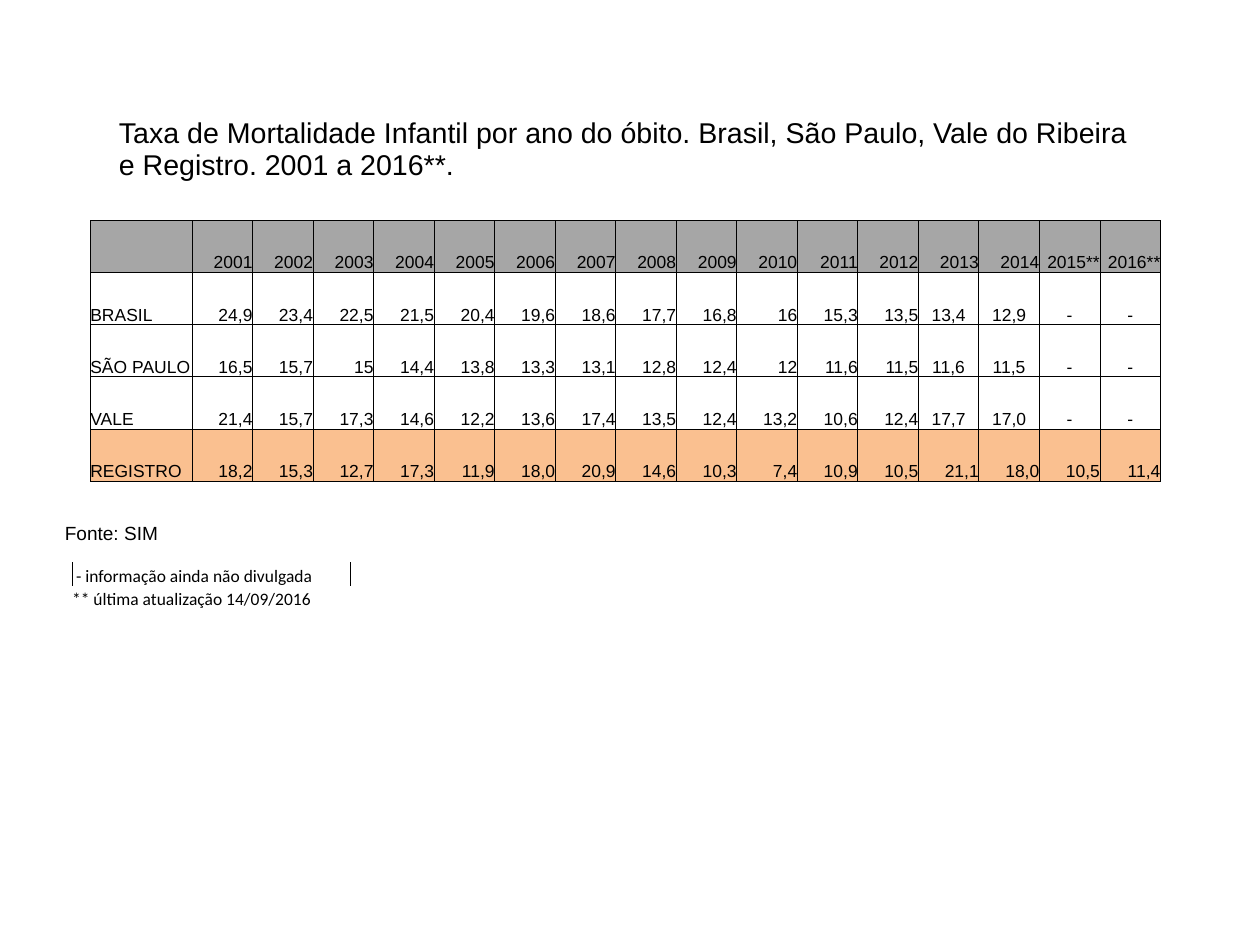
from dataclasses import dataclass
from typing import Any

from lxml.etree import SubElement
from pptx import Presentation
from pptx.dml.color import RGBColor
from pptx.enum.text import MSO_ANCHOR, MSO_AUTO_SIZE, PP_ALIGN
from pptx.oxml.ns import qn
from pptx.util import Cm, Pt

SLIDE_WIDTH = Cm(28)
SLIDE_HEIGHT = Cm(21)
COLOURS = {"ink": "000000", "header": "A6A6A6", "highlight": "FAC090"}
PLAIN_TABLE_STYLE = "{2D5ABB26-0587-4C30-8999-92F81FD0307C}"
BORDER_WIDTH = Pt(0.5)
FIRST_RECENT_COLUMN = 13


@dataclass(frozen=True)
class Area:
    left: float
    top: float
    width: float
    height: float

    def lengths(self) -> tuple[int, int, int, int]:
        return (
            round(SLIDE_WIDTH * self.left / 100),
            round(SLIDE_HEIGHT * self.top / 100),
            round(SLIDE_WIDTH * self.width / 100),
            round(SLIDE_HEIGHT * self.height / 100),
        )


@dataclass(frozen=True)
class RateRow:
    label: str
    values: str
    fill: str | None = None
    recent_alignment: PP_ALIGN = PP_ALIGN.CENTER

    def texts(self) -> list[str]:
        return [self.label, *self.values.split()]

    def alignment(self, column: int) -> PP_ALIGN:
        if column == 0:
            return PP_ALIGN.LEFT
        return self.recent_alignment if column >= FIRST_RECENT_COLUMN else PP_ALIGN.RIGHT


TITLE_AREA = Area(8.53, 11.85, 82.2, 7.98)
SOURCE_AREA = Area(4.26, 54.78, 17.88, 3.51)
RATES_AREA = Area(7.17, 23.32, 84.95, 27.6)
NOTES_AREA = Area(5.72, 59.49, 61.43, 5.05)
RATES_LABEL_SHARE = 0.095
NOTES_LABEL_SHARE = 0.36

RATE_ROWS = [
    RateRow("", " ".join([*map(str, range(2001, 2015)), "2015**", "2016**"]), "header", PP_ALIGN.RIGHT),
    RateRow("BRASIL", "24,9 23,4 22,5 21,5 20,4 19,6 18,6 17,7 16,8 16 15,3 13,5 13,4 12,9 - -"),
    RateRow("SÃO PAULO", "16,5 15,7 15 14,4 13,8 13,3 13,1 12,8 12,4 12 11,6 11,5 11,6 11,5 - -"),
    RateRow("VALE", "21,4 15,7 17,3 14,6 12,2 13,6 17,4 13,5 12,4 13,2 10,6 12,4 17,7 17,0 - -"),
    RateRow(
        "REGISTRO",
        "18,2 15,3 12,7 17,3 11,9 18,0 20,9 14,6 10,3 7,4 10,9 10,5 21,1 18,0 10,5 11,4",
        "highlight",
        PP_ALIGN.RIGHT,
    ),
]
NOTES = [" - informação ainda não divulgada", "** última atualização 14/09/2016"]


def write_text(
    frame: Any,
    text: str,
    *,
    size: float,
    font: str = "Arial",
    alignment: PP_ALIGN = PP_ALIGN.LEFT,
) -> None:
    para = frame.paragraphs[0]
    para.alignment = alignment
    para.line_spacing = 0.93
    para.space_before = Pt(0)
    if not text:
        para._p.get_or_add_endParaRPr().set("sz", str(round(size * 100)))
        return
    span = para.add_run()
    span.text = text
    span.font.size = Pt(size)
    span.font.name = font
    span.font.color.rgb = RGBColor.from_string(COLOURS["ink"])


def format_box(box: Any, area: Area) -> None:
    box.left, box.top, box.width, box.height = area.lengths()
    frame = box.text_frame
    frame.word_wrap = True
    frame.auto_size = MSO_AUTO_SIZE.NONE
    frame.vertical_anchor = MSO_ANCHOR.TOP


def add_grid(page: Any, area: Area, rows: int, columns: int, label_share: float) -> Any:
    left, top, width, height = area.lengths()
    table = page.shapes.add_table(rows, columns, left, top, width, height).table
    table.first_row = False
    table.horz_banding = False
    table._tbl.tblPr.find(qn("a:tableStyleId")).text = PLAIN_TABLE_STYLE
    label_width = round(width * label_share)
    for index, column in enumerate(table.columns):
        column.width = label_width if index == 0 else (width - label_width) // (columns - 1)
    return table


def format_cell(cell: Any, fill: str | None = None, sides: str = "") -> None:
    cell.margin_left = cell.margin_right = cell.margin_top = cell.margin_bottom = 0
    cell.vertical_anchor = MSO_ANCHOR.BOTTOM
    properties = cell._tc.get_or_add_tcPr()
    for side in "LRTB":
        line = SubElement(properties, qn(f"a:ln{side}"), w=str(BORDER_WIDTH))
        if side in sides:
            solid = SubElement(line, qn("a:solidFill"))
            SubElement(solid, qn("a:srgbClr"), val=COLOURS["ink"])
        else:
            SubElement(line, qn("a:noFill"))
    if fill:
        cell.fill.solid()
        cell.fill.fore_color.rgb = RGBColor.from_string(COLOURS[fill])
    else:
        cell.fill.background()


def draw_rates(page: Any) -> None:
    columns = len(RATE_ROWS[0].texts())
    table = add_grid(page, RATES_AREA, len(RATE_ROWS), columns, RATES_LABEL_SHARE)
    for row_index, rate_row in enumerate(RATE_ROWS):
        for column, text in enumerate(rate_row.texts()):
            cell = table.cell(row_index, column)
            format_cell(cell, rate_row.fill, "LRTB")
            write_text(cell.text_frame, text, size=11, alignment=rate_row.alignment(column))


def draw_notes(page: Any) -> None:
    table = add_grid(page, NOTES_AREA, len(NOTES), 4, NOTES_LABEL_SHARE)
    table.cell(1, 0).merge(table.cell(1, 3))
    borders = {(0, 0): "LR", (0, 1): "L"}
    for row_index, note in enumerate(NOTES):
        for column in range(4):
            cell = table.cell(row_index, column)
            format_cell(cell, sides=borders.get((row_index, column), ""))
            write_text(cell.text_frame, note if column == 0 else "", size=11, font="Calibri")


def main() -> None:
    deck = Presentation()
    deck.slide_width = SLIDE_WIDTH
    deck.slide_height = SLIDE_HEIGHT
    page = deck.slides.add_slide(deck.slide_layouts[5])

    title = page.shapes.title
    format_box(title, TITLE_AREA)
    write_text(
        title.text_frame,
        "Taxa de Mortalidade Infantil por ano do óbito. Brasil, São Paulo, "
        "Vale do Ribeira e Registro. 2001 a 2016**.",
        size=18,
    )

    source = page.shapes.add_textbox(*SOURCE_AREA.lengths())
    format_box(source, SOURCE_AREA)
    write_text(source.text_frame, "Fonte: SIM", size=12)

    draw_rates(page)
    draw_notes(page)
    deck.save("out.pptx")


if __name__ == "__main__":
    main()
